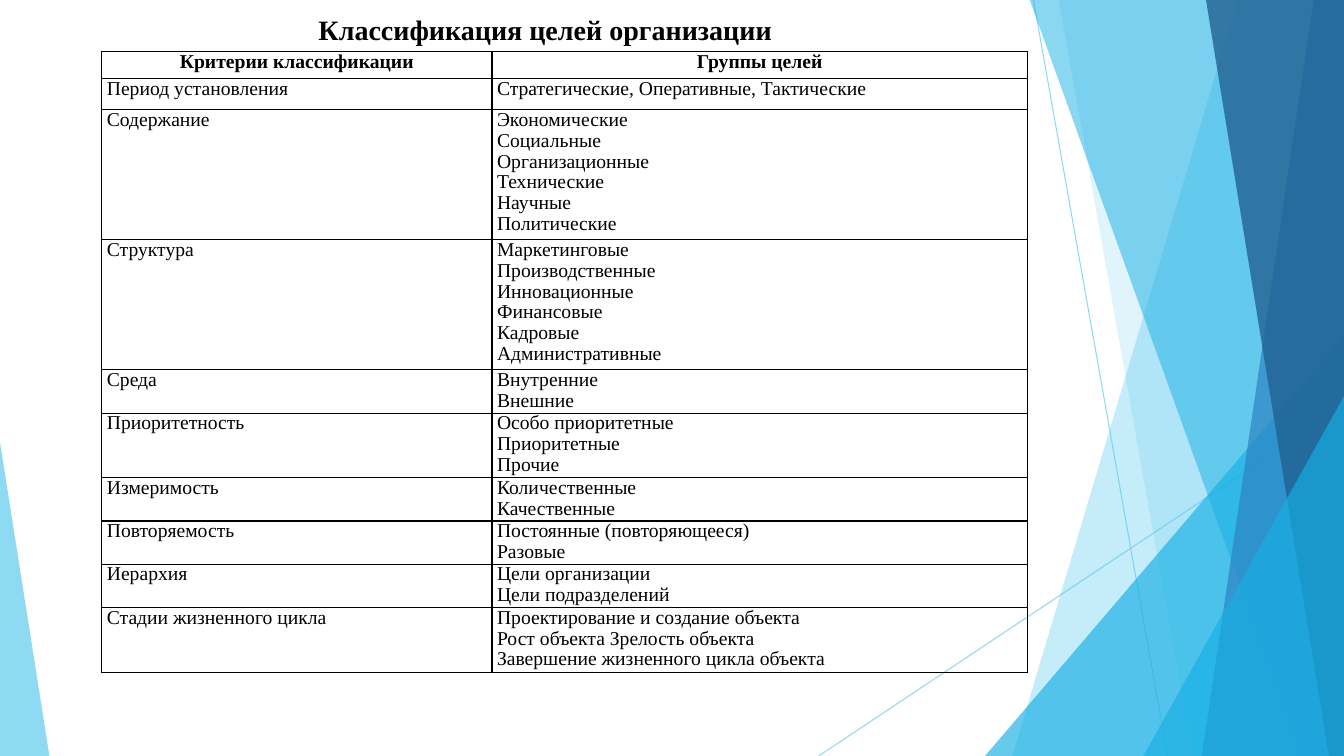
from dataclasses import dataclass

from lxml.etree import SubElement
from pptx import Presentation
from pptx.dml.color import RGBColor
from pptx.enum.shapes import MSO_CONNECTOR, MSO_SHAPE
from pptx.enum.text import MSO_ANCHOR, PP_ALIGN
from pptx.oxml.ns import qn
from pptx.util import Pt

PX = 9144
WIDTH, HEIGHT = 1333, 750


@dataclass(frozen=True)
class Theme:
    """Colours, font and type sizes of the slide."""
    font: str = "Times New Roman"
    text: str = "000000"
    sky: str = "5FCBEF"
    cyan: str = "17B0E4"
    blue: str = "2E83C3"
    navy: str = "226292"
    title_size: int = 20
    table_size: int = 14
    line_spacing: float = 0.96


THEME = Theme()

TITLE = "Классификация целей организации"
HEADER = ("Критерии классификации", ["Группы целей"])
CRITERIA = [
    ("Период установления", ["Стратегические, Оперативные, Тактические"]),
    ("Содержание", ["Экономические", "Социальные", "Организационные",
                    "Технические", "Научные", "Политические"]),
    ("Структура", ["Маркетинговые", "Производственные", "Инновационные",
                   "Финансовые", "Кадровые", "Административные"]),
    ("Среда", ["Внутренние", "Внешние"]),
    ("Приоритетность", ["Особо приоритетные", "Приоритетные", "Прочие"]),
    ("Измеримость", ["Количественные", "Качественные"]),
    ("Повторяемость", ["Постоянные (повторяющееся)", "Разовые"]),
    ("Иерархия", ["Цели организации", "Цели подразделений"]),
    ("Стадии жизненного цикла", ["Проектирование и создание объекта",
                                 "Рост объекта Зрелость объекта",
                                 "Завершение жизненного цикла объекта"]),
]
ROW_HEIGHTS = {1: 31, 2: 43, 3: 64, 6: 129}


def scaled(*lengths):
    """Turn px lengths into EMU."""
    return [length * PX for length in lengths]


def set_alpha(element, percent):
    """Make the solid colour inside the element partly transparent."""
    colour = next(element.iter(qn("a:srgbClr")))
    SubElement(colour, qn("a:alpha"), val=str(percent * 1000))


def paint(shape, colour, alpha):
    """Give a shape a transparent fill without line or shadow."""
    shape.shadow.inherit = False
    shape.line.fill.background()
    shape.fill.solid()
    shape.fill.fore_color.rgb = RGBColor.from_string(colour)
    set_alpha(shape.fill._xPr, alpha)


def add_ray(slide, start, end):
    """Draw one thin transparent line."""
    ray = slide.shapes.add_connector(MSO_CONNECTOR.STRAIGHT, *scaled(*start, *end))
    ray.line.width = Pt(0.75)
    ray.line.color.rgb = RGBColor.from_string(THEME.sky)
    properties = ray._element.spPr
    set_alpha(properties, 70)
    SubElement(properties, qn("a:effectLst"))


def add_shard(slide, top_x, bottom_x, colour, alpha):
    """Draw a slanted band that reaches the right edge of the slide."""
    builder = slide.shapes.build_freeform(top_x, -1, scale=PX)
    builder.add_line_segments([(WIDTH, -1), (WIDTH, HEIGHT), (bottom_x, HEIGHT)])
    paint(builder.convert_to_shape(), colour, alpha)


def add_corner(slide, left, top, width, apex, colour, alpha):
    """Draw a right triangle that stands on the bottom edge."""
    corner = slide.shapes.add_shape(
        MSO_SHAPE.ISOSCELES_TRIANGLE, *scaled(left, top, width, HEIGHT - top))
    corner.adjustments[0] = apex
    paint(corner, colour, alpha)


def add_backdrop(slide):
    """Draw the overlapping facets from back to front."""
    add_ray(slide, (1025, 0), (1158, HEIGHT))
    add_ray(slide, (WIDTH, 403), (812, HEIGHT))
    add_shard(slide, 1228, 1004, THEME.sky, 36)
    add_shard(slide, 1050, 1183, THEME.sky, 20)
    add_corner(slide, 977, 333, 356, 1, THEME.cyan, 66)
    add_shard(slide, 1021, 1291, THEME.cyan, 50)
    add_shard(slide, 1303, 1192, THEME.blue, 70)
    add_shard(slide, 1196, 1318, THEME.navy, 80)
    add_corner(slide, 1134, 393, 199, 1, THEME.cyan, 66)
    add_corner(slide, 0, 439, 49, 0, THEME.sky, 70)


def style_text(text_frame, size, bold, alignment):
    """Format every paragraph of a text frame."""
    for paragraph in text_frame.paragraphs:
        paragraph.alignment = alignment
        for run in paragraph.runs:
            run.font.name = THEME.font
            run.font.size = Pt(size)
            run.font.bold = bold
            run.font.color.rgb = RGBColor.from_string(THEME.text)


def add_title(slide, left, top, width, height):
    """Place the slide title in its box."""
    text_frame = slide.shapes.add_textbox(*scaled(left, top, width, height)).text_frame
    text_frame.word_wrap = True
    text_frame.vertical_anchor = MSO_ANCHOR.MIDDLE
    text_frame.text = TITLE
    style_text(text_frame, THEME.title_size, True, PP_ALIGN.JUSTIFY)


def add_borders(cell):
    """Outline a cell on all four sides."""
    properties = cell._tc.get_or_add_tcPr()
    for side in ("lnL", "lnR", "lnT", "lnB"):
        border = SubElement(properties, qn(f"a:{side}"), w=str(Pt(1)))
        fill = SubElement(border, qn("a:solidFill"))
        SubElement(fill, qn("a:srgbClr"), val=THEME.text)


def fill_cell(cell, lines, is_header):
    """Write the lines of one cell and style it."""
    cell.margin_left = cell.margin_right = 5 * PX
    cell.margin_top = cell.margin_bottom = 0
    add_borders(cell)
    cell.fill.background()
    cell.text_frame.text = "\n".join(lines)
    alignment = PP_ALIGN.CENTER if is_header else PP_ALIGN.JUSTIFY
    style_text(cell.text_frame, THEME.table_size, is_header, alignment)
    for paragraph in cell.text_frame.paragraphs:
        paragraph.line_spacing = THEME.line_spacing


def add_goals_table(slide, left, top, column_widths):
    """Place the table of criteria and goal groups."""
    rows = [HEADER, *CRITERIA]
    heights = [27] + [ROW_HEIGHTS[len(groups)] for _, groups in CRITERIA]
    frame = slide.shapes.add_table(
        len(rows), len(column_widths),
        *scaled(left, top, sum(column_widths), sum(heights)))
    table = frame.table
    table.first_row = table.horz_banding = False
    for column, width in zip(table.columns, column_widths):
        column.width = width * PX
    for index, (criterion, groups) in enumerate(rows):
        table.rows[index].height = heights[index] * PX
        fill_cell(table.cell(index, 0), [criterion], index == 0)
        fill_cell(table.cell(index, 1), groups, index == 0)


def main():
    """Build and save the slide."""
    presentation = Presentation()
    presentation.slide_width, presentation.slide_height = scaled(WIDTH, HEIGHT)
    slide = presentation.slides.add_slide(presentation.slide_layouts[6])
    add_backdrop(slide)
    add_goals_table(slide, 101, 51, (387, 531))
    add_title(slide, 306, 7, 545, 44)
    presentation.save("out.pptx")


if __name__ == "__main__":
    main()
